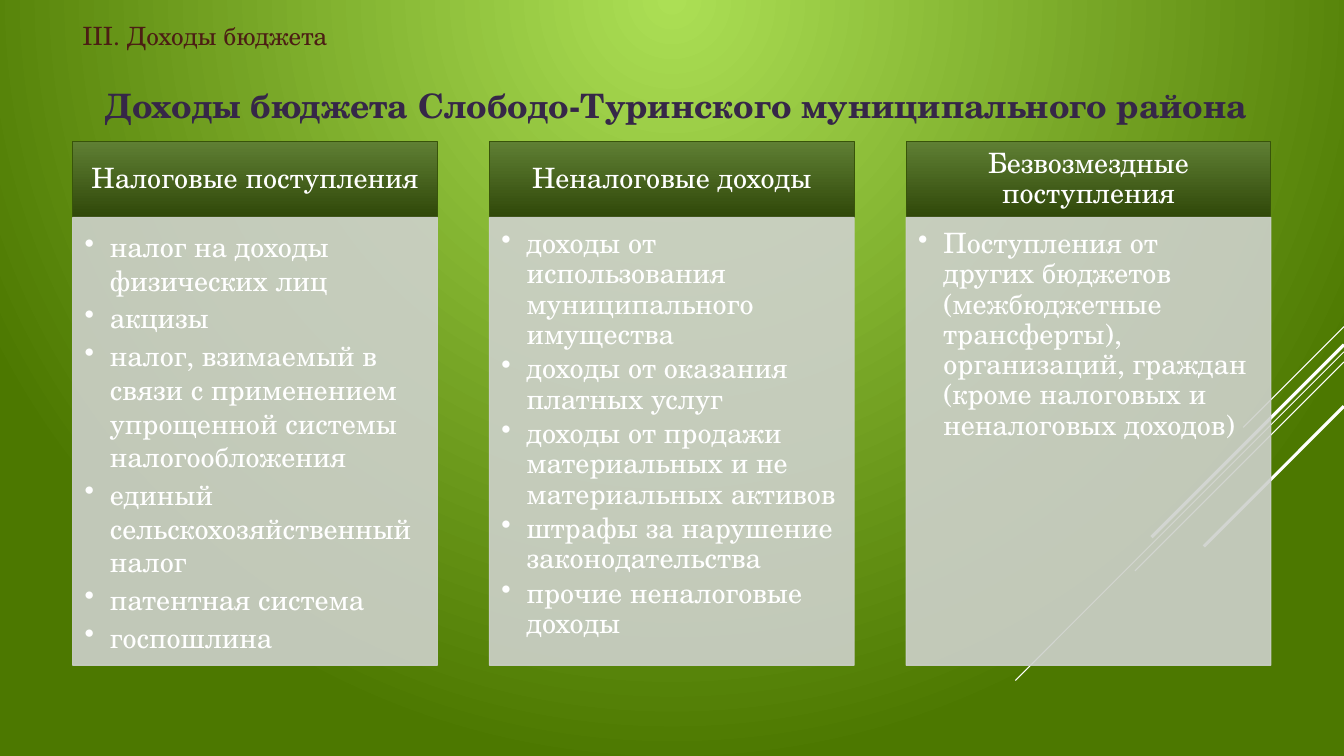
from pptx import Presentation
from pptx.dml.color import RGBColor
from pptx.enum.shapes import MSO_CONNECTOR as Connector, MSO_SHAPE as Preset
from pptx.enum.text import MSO_ANCHOR as Anchor, PP_ALIGN as Align
from pptx.oxml import parse_xml
from pptx.oxml.ns import nsdecls
from pptx.util import Pt

SECTION = "III. Доходы бюджета"
TITLE = "Доходы бюджета Слободо-Туринского муниципального района"
COLUMNS = [
    ("Налоговые поступления", 1.0, [
        "налог на доходы физических лиц",
        "акцизы",
        "налог, взимаемый в связи с применением упрощенной системы налогообложения",
        "единый сельскохозяйственный налог",
        "патентная система",
        "госпошлина",
    ]),
    ("Неналоговые доходы", 0.9, [
        "доходы от использования муниципального имущества",
        "доходы от оказания платных услуг",
        "доходы от продажи материальных и не материальных активов",
        "штрафы за нарушение законодательства",
        "прочие неналоговые доходы",
    ]),
    ("Безвозмездные поступления", 0.9, [
        "Поступления от других бюджетов (межбюджетные трансферты), "
        "организаций, граждан (кроме налоговых и неналоговых доходов)",
    ]),
]
DIAGONALS = [
    (233.3, 72, 0.75),
    (251.3, 234.7, 0.75),
    (258.5, 149.3, 0.75),
    (246.2, 137.5, 2.25),
    (290.2, 100.1, 2.25),
]

FONT = "TeX Gyre Schola"
WHITE = RGBColor(0xFF, 0xFF, 0xFF)
SECTION_BROWN = RGBColor(0x4C, 0x1E, 0x14)
TITLE_VIOLET = RGBColor(0x36, 0x27, 0x48)
GLOW_GREEN = RGBColor(0xAC, 0xDF, 0x55)
DEEP_GREEN = RGBColor(0x4C, 0x78, 0x00)
HEADER_TOP = RGBColor(0x5F, 0x7F, 0x34)
HEADER_BOTTOM = RGBColor(0x30, 0x48, 0x09)
HEADER_EDGE = RGBColor(0x38, 0x54, 0x0A)
PANEL_GREY = RGBColor(0xCE, 0xD1, 0xCC)

SLIDE_WIDTH, SLIDE_HEIGHT = 960, 540
LEFT, CONTENT_WIDTH = 51.84, 856.8
COLUMN_WIDTH, COLUMN_STEP = 260.64, 297.7
HEADER_TOP_Y, HEADER_HEIGHT, PANEL_HEIGHT = 100.8, 54.5, 319.9


def xml(tag, attributes="", children=""):
    return parse_xml(f"<a:{tag} {nsdecls('a')} {attributes}>{children}</a:{tag}>")


def set_gradient(fill, colors):
    fill.gradient()
    for stop, color in zip(fill.gradient_stops, colors):
        stop.color.rgb = color


def set_margins(frame, left, top, right, bottom):
    frame.margin_left, frame.margin_top = Pt(left), Pt(top)
    frame.margin_right, frame.margin_bottom = Pt(right), Pt(bottom)


def set_indent(paragraph, margin, indent):
    properties = paragraph._p.get_or_add_pPr()
    properties.set("marL", str(Pt(margin)))
    properties.set("indent", str(Pt(indent)))
    return properties


def write(frame, text, size, color, align=Align.LEFT, bold=False):
    frame.word_wrap = True
    frame.text = text
    for paragraph in frame.paragraphs:
        paragraph.alignment = align
        for run in paragraph.runs:
            run.font.name, run.font.size = FONT, Pt(size)
            run.font.color.rgb, run.font.bold = color, bold


def add_box(slide, left, top, height, edge):
    box = slide.shapes.add_shape(
        Preset.RECTANGLE, Pt(left), Pt(top), Pt(COLUMN_WIDTH), Pt(height))
    box.shadow.inherit = False
    box.line.color.rgb, box.line.width = edge, Pt(0.75)
    return box


def add_header(slide, left, text):
    box = add_box(slide, left, HEADER_TOP_Y, HEADER_HEIGHT, HEADER_EDGE)
    set_gradient(box.fill, (HEADER_TOP, HEADER_BOTTOM))
    box.fill.gradient_angle = 270
    frame = box.text_frame
    write(frame, text, 20, WHITE, Align.CENTER)
    set_margins(frame, 11.5, 6.5, 11.5, 6.5)
    frame.vertical_anchor = Anchor.MIDDLE
    frame.paragraphs[0].line_spacing = 0.9


def add_panel(slide, left, items, line_spacing):
    box = add_box(slide, left, HEADER_TOP_Y + HEADER_HEIGHT, PANEL_HEIGHT, PANEL_GREY)
    box.fill.solid()
    box.fill.fore_color.rgb = PANEL_GREY
    for color in box._element.spPr.xpath(".//a:srgbClr"):
        color.append(xml("alpha", 'val="90000"'))
    frame = box.text_frame
    write(frame, "\n".join(items), 20, WHITE)
    set_margins(frame, 8.64, 8.64, 11.52, 12.24)
    frame.vertical_anchor = Anchor.TOP
    for paragraph in frame.paragraphs:
        paragraph.level = 1
        paragraph.line_spacing = line_spacing
        paragraph.space_after = Pt(3)
        set_indent(paragraph, 18, -18).append(xml("buChar", 'char="•"'))


def add_diagonal(slide, start, run, width):
    line = slide.shapes.add_connector(
        Connector.STRAIGHT, Pt(SLIDE_WIDTH), Pt(start),
        Pt(SLIDE_WIDTH - run), Pt(start + run))
    line.line.color.rgb, line.line.width = WHITE, Pt(width)
    line._element.spPr.append(xml("effectLst"))


def add_heading(slide, top, height, *style):
    box = slide.shapes.add_textbox(Pt(LEFT), Pt(top), Pt(CONTENT_WIDTH), Pt(height))
    write(box.text_frame, *style)
    return box.text_frame


def main():
    presentation = Presentation()
    presentation.slide_width, presentation.slide_height = Pt(SLIDE_WIDTH), Pt(SLIDE_HEIGHT)
    slide = presentation.slides.add_slide(presentation.slide_layouts[6])

    set_gradient(slide.background.fill, (GLOW_GREEN, DEEP_GREEN))
    direction = slide.element.xpath(".//p:bg//a:lin")[0]
    direction.getparent().replace(direction, xml(
        "path", 'path="circle"', '<a:fillToRect l="0" t="0" r="0" b="100000"/>'))

    for diagonal in DIAGONALS:
        add_diagonal(slide, *diagonal)

    section = add_heading(slide, 13.7, 23.8, SECTION, 18, SECTION_BROWN)
    section.vertical_anchor = Anchor.MIDDLE
    title = add_heading(slide, 56.9, 36, TITLE, 24, TITLE_VIOLET, Align.CENTER, True)
    title.paragraphs[0].space_before = Pt(6)
    set_indent(title.paragraphs[0], 28.8, -22.3)

    for index, (header, line_spacing, items) in enumerate(COLUMNS):
        left = LEFT + index * COLUMN_STEP
        add_header(slide, left, header)
        add_panel(slide, left, items, line_spacing)

    presentation.save("out.pptx")


if __name__ == "__main__":
    main()
